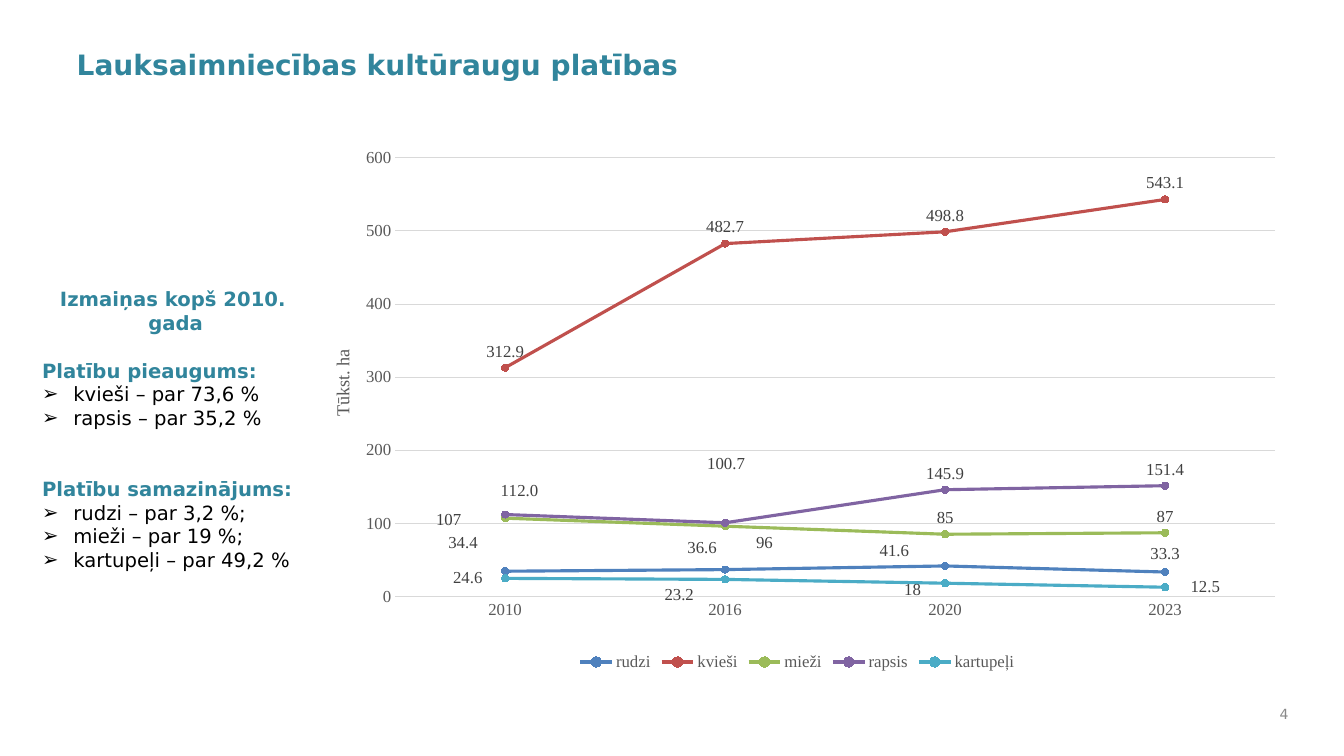
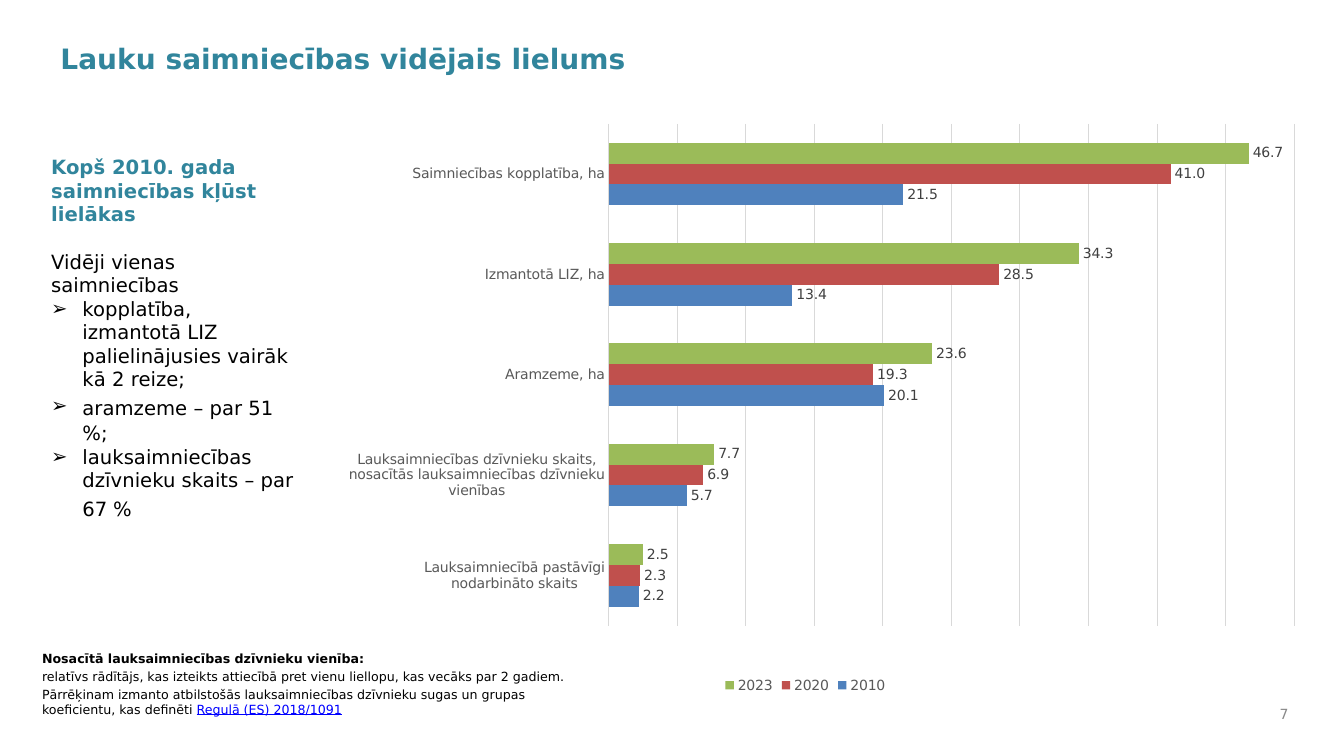
"""Build two slides on Latvian crop areas and average farm size."""
from dataclasses import dataclass, field

from lxml import etree
from pptx import Presentation
from pptx.chart.axis import ValueAxis
from pptx.chart.chart import Chart
from pptx.chart.data import CategoryChartData
from pptx.chart.series import BarSeries, LineSeries
from pptx.dml.color import RGBColor
from pptx.enum.chart import XL_CHART_TYPE, XL_LABEL_POSITION, XL_LEGEND_POSITION, XL_MARKER_STYLE, XL_TICK_MARK
from pptx.enum.shapes import MSO_SHAPE
from pptx.enum.text import MSO_ANCHOR, MSO_AUTO_SIZE, PP_ALIGN
from pptx.oxml.ns import qn
from pptx.presentation import Presentation as Deck
from pptx.slide import Slide
from pptx.text.text import Font, TextFrame
from pptx.util import Cm, Pt

LINE_CHART = XL_CHART_TYPE.LINE_MARKERS
BAR_CHART = XL_CHART_TYPE.BAR_CLUSTERED
ABOVE, OUTSIDE = XL_LABEL_POSITION.ABOVE, XL_LABEL_POSITION.OUTSIDE_END
BOTTOM = XL_LEGEND_POSITION.BOTTOM
CIRCLE = XL_MARKER_STYLE.CIRCLE
NO_TICK = XL_TICK_MARK.NONE
RECTANGLE = MSO_SHAPE.RECTANGLE
TOP, MIDDLE = MSO_ANCHOR.TOP, MSO_ANCHOR.MIDDLE
LEFT, CENTER, RIGHT = PP_ALIGN.LEFT, PP_ALIGN.CENTER, PP_ALIGN.RIGHT
NO_AUTOFIT = MSO_AUTO_SIZE.NONE

TEAL = RGBColor(0x31, 0x85, 0x9C)
BLACK = RGBColor(0x00, 0x00, 0x00)
WHITE = RGBColor(0xFF, 0xFF, 0xFF)
LINK_BLUE = RGBColor(0x00, 0x00, 0xFF)
PAGE_GRAY = RGBColor(0x89, 0x89, 0x89)
AXIS_GRAY = RGBColor(0x59, 0x59, 0x59)
LABEL_GRAY = RGBColor(0x40, 0x40, 0x40)
GRID_GRAY = RGBColor(0xD9, 0xD9, 0xD9)
BLUE = RGBColor(0x4F, 0x81, 0xBD)
RED = RGBColor(0xC0, 0x50, 0x4D)
GREEN = RGBColor(0x9B, 0xBB, 0x59)
PURPLE = RGBColor(0x80, 0x64, 0xA2)
AQUA = RGBColor(0x4B, 0xAC, 0xC6)

SANS, SERIF, SPACER_FONT = "DejaVu Sans", "Times New Roman", "Cabin"
BULLET_INDENT = Cm(0.79)


@dataclass(frozen=True)
class Area:
    """A rectangle on the page, in centimetres."""
    left: float
    top: float
    width: float
    height: float

    def lengths(self) -> tuple[Cm, Cm, Cm, Cm]:
        """Return the four sides as lengths."""
        return Cm(self.left), Cm(self.top), Cm(self.width), Cm(self.height)


@dataclass(frozen=True)
class Style:
    """The look of a piece of text."""
    size: float
    color: RGBColor = BLACK
    bold: bool = False
    name: str = SANS
    underline: bool = False


TITLE = Style(20, TEAL, True)
HEADING = Style(14, TEAL, True)
BODY = Style(14)
SPACER = Style(18, name=SPACER_FONT)
NOTE = Style(9)
NOTE_HEADING = Style(9, bold=True)
NOTE_LINK = Style(9, LINK_BLUE, underline=True)
PAGE_NUMBER = Style(10, PAGE_GRAY)


@dataclass(frozen=True)
class Span:
    """Text that differs from the style of its paragraph."""
    text: str
    style: Style


@dataclass(frozen=True)
class Para:
    """One paragraph of plain and styled text."""
    spans: tuple[str | Span, ...]
    style: Style = BODY
    align: PP_ALIGN = LEFT
    before: float = 0
    bullet: bool = False


@dataclass(frozen=True)
class Series:
    """One chart series; label shifts are percentages of the chart size."""
    name: str
    values: tuple[float, ...]
    color: RGBColor
    number_format: str = "General"
    shifts: dict[int, tuple[float, float]] = field(default_factory=dict)


@dataclass(frozen=True)
class ChartPlan:
    """A chart, its place and its plot area in percent."""
    kind: XL_CHART_TYPE
    area: Area
    plot: tuple[float, float, float, float]
    categories: tuple[str, ...]
    series: tuple[Series, ...]
    font_name: str
    font_size: float
    maximum: float
    step: float


NBSP = Span(" ", SPACER)

CROP_TEXT = (
    Para(("Izmaiņas kopš 2010.", Span("  ", SPACER), "gada"), HEADING, CENTER),
    Para(("Platību pieaugums:",), HEADING, before=17),
    Para(("kvieši – par 73,6 %",), bullet=True),
    Para(("rapsis – par 35,2 %",), bullet=True),
    Para(("Platību samazinājums:",), HEADING, before=34),
    Para(("rudzi – par 3,2 %;",), bullet=True),
    Para(("mieži – par 19 %;",), bullet=True),
    Para(("kartupeļi – par 49,2 %",), bullet=True),
)
FARM_TEXT = (
    Para(("Kopš 2010. gada saimniecības kļūst lielākas",), HEADING),
    Para(("Vidēji vienas saimniecības",), before=17),
    Para(("kopplatība, izmantotā LIZ palielinājusies vairāk kā 2 reize;",), bullet=True),
    Para(("aramzeme – par 51", NBSP, "%;"), bullet=True),
    Para(("lauksaimniecības dzīvnieku skaits – par 67", NBSP, "%"), bullet=True),
)
UNIT_NOTE = (
    Para(("Nosacītā lauksaimniecības dzīvnieku vienība:",), NOTE_HEADING),
    Para(("relatīvs rādītājs, kas izteikts attiecībā pret vienu liellopu, kas vecāks par 2 gadiem.",),
         NOTE, before=1.8),
    Para(("Pārrēķinam izmanto atbilstošās lauksaimniecības dzīvnieku sugas un grupas koeficientu, "
          "kas definēti ", Span("Regulā (ES) 2018/1091", NOTE_LINK)), NOTE, before=1.8),
)
CROP_CHART = ChartPlan(
    LINE_CHART, Area(8.03, 3.45, 24.13, 13.56), (8, 3.9, 91.9, 81.5),
    ("2010", "2016", "2020", "2023"),
    (
        Series("rudzi", (34.4, 36.6, 41.6, 33.3), BLUE,
               shifts={0: (-4.4, -2.2), 1: (-2.4, -1), 2: (-5.3, 0.2), 3: (0, -0.4)}),
        Series("kvieši", (312.9, 482.7, 498.8, 543.1), RED),
        Series("mieži", (107, 96, 85, 87), GREEN, shifts={0: (-5.9, 3.3), 1: (4.1, 6.1)}),
        Series("rapsis", (112, 100.7, 145.9, 151.4), PURPLE, "0.0",
               {0: (1.5, -1.3), 1: (0.1, -8)}),
        Series("kartupeļi", (24.6, 23.2, 18, 12.5), AQUA,
               shifts={0: (-3.9, 2.9), 1: (-4.8, 5.9), 2: (-3.4, 4.2), 3: (4.2, 2.9)}),
    ), SERIF, 12, 600, 100)
FARM_CHART = ChartPlan(
    BAR_CHART, Area(7.85, 3.02, 24.89, 14.55), (30.1, 0.7, 69.4, 86.9),
    ("Lauksaimniecībā pastāvīgi\nnodarbināto skaits",
     "Lauksaimniecības dzīvnieku skaits,\nnosacītās lauksaimniecības dzīvnieku vienības",
     "Aramzeme, ha", "Izmantotā LIZ, ha", "Saimniecības kopplatība, ha"),
    (
        Series("2010", (2.2, 5.7, 20.1, 13.4, 21.5), BLUE, "0.0"),
        Series("2020", (2.3, 6.9, 19.3, 28.5, 41), RED, "0.0"),
        Series("2023", (2.5, 7.7, 23.6, 34.3, 46.7), GREEN, "0.0"),
    ), SANS, 10, 50, 5)


def apply_style(font: Font, style: Style) -> None:
    """Give a font the look of a style."""
    font.name, font.size, font.bold = style.name, Pt(style.size), style.bold
    font.color.rgb = style.color
    if style.underline:
        font.underline = True


def write_text(frame: TextFrame, paras: tuple[Para, ...], anchor: MSO_ANCHOR = TOP) -> None:
    """Fill a text frame with paragraphs."""
    frame.word_wrap = True
    frame.auto_size = NO_AUTOFIT
    frame.vertical_anchor = anchor
    for index, para in enumerate(paras):
        paragraph = frame.add_paragraph() if index else frame.paragraphs[0]
        paragraph.alignment = para.align
        paragraph.space_before = Pt(para.before)
        if para.bullet:
            properties = paragraph._p.get_or_add_pPr()
            properties.set("marL", str(BULLET_INDENT))
            properties.set("indent", str(-BULLET_INDENT))
            etree.SubElement(properties, qn("a:buFont")).set("typeface", SANS)
            etree.SubElement(properties, qn("a:buChar")).set("char", "➢")
        apply_style(paragraph.font, para.style)
        for span in para.spans:
            run = paragraph.add_run()
            if isinstance(span, Span):
                run.text = span.text
                apply_style(run.font, span.style)
            else:
                run.text = span


def add_page(deck: Deck, title: str, area: Area, number: int) -> Slide:
    """Add a slide with its title and page number."""
    page = deck.slides.add_slide(deck.slide_layouts[5])
    heading = page.shapes.title
    heading.left, heading.top, heading.width, heading.height = area.lengths()
    write_text(heading.text_frame, (Para((title,), TITLE),))
    add_note(page, Area(31.6, 17.58, 1.12, 0.84), (Para((str(number),), PAGE_NUMBER, RIGHT),), MIDDLE)
    return page


def add_note(page: Slide, area: Area, paras: tuple[Para, ...], anchor: MSO_ANCHOR = TOP) -> None:
    """Add a plain text box."""
    write_text(page.shapes.add_textbox(*area.lengths()).text_frame, paras, anchor)


def add_panel(page: Slide, area: Area, paras: tuple[Para, ...], bottom_inset: float = 0.13) -> None:
    """Add a white panel with vertically centred text."""
    panel = page.shapes.add_shape(RECTANGLE, *area.lengths())
    panel.shadow.inherit = False
    panel.fill.solid()
    panel.fill.fore_color.rgb = WHITE
    panel.line.fill.background()
    panel.text_frame.margin_bottom = Cm(bottom_inset)
    write_text(panel.text_frame, paras, MIDDLE)


def set_layout(parent: etree._Element, index: int, **settings: str | float) -> None:
    """Give a chart element a manual layout; numbers are percentages."""
    for old in parent.findall(qn("c:layout")):
        parent.remove(old)
    layout = etree.Element(qn("c:layout"))
    manual = etree.SubElement(layout, qn("c:manualLayout"))
    for name, value in settings.items():
        text = value if isinstance(value, str) else f"{value / 100:.3f}"
        etree.SubElement(manual, qn(f"c:{name}")).set("val", text)
    parent.insert(index, layout)


def format_labels(series: BarSeries | LineSeries, plan: Series, style: Style,
                  position: XL_LABEL_POSITION) -> None:
    """Show the values of a series and move the shifted labels."""
    labels = series.data_labels
    labels.show_value = True
    labels.position = position
    apply_style(labels.font, style)
    for index in plan.shifts:
        label = series.points[index].data_label
        label.position = position
        apply_style(label.font, style)
    for node, (x, y) in zip(series._element.xpath("c:dLbls/c:dLbl"), plan.shifts.values()):
        set_layout(node, 1, x=x, y=y)
    for node in series._element.xpath("c:dLbls/c:showLeaderLines"):
        node.set("val", "0")


def format_value_axis(axis: ValueAxis, plan: ChartPlan) -> None:
    """Set the scale and grid of the value axis."""
    axis.minimum_scale, axis.maximum_scale, axis.major_unit = 0, plan.maximum, plan.step
    axis.has_major_gridlines = True
    grid = axis.major_gridlines.format.line
    grid.color.rgb, grid.width = GRID_GRAY, Pt(0.75)
    axis.major_tick_mark = NO_TICK
    axis.format.line.fill.background()


def add_plan(page: Slide, plan: ChartPlan) -> Chart:
    """Draw a chart from its plan."""
    data = CategoryChartData()
    data.categories = plan.categories
    for item in plan.series:
        data.add_series(item.name, item.values, item.number_format)
    chart = page.shapes.add_chart(plan.kind, *plan.area.lengths(), data).chart
    gray = Style(plan.font_size, AXIS_GRAY, name=plan.font_name)
    apply_style(chart.font, Style(10, name=plan.font_name))
    chart.has_title = False
    chart.has_legend = True
    chart.legend.position = BOTTOM
    chart.legend.include_in_layout = False
    apply_style(chart.legend.font, gray)
    x, y, w, h = plan.plot
    set_layout(chart._chartSpace.chart.plotArea, 0, layoutTarget="inner",
               xMode="edge", yMode="edge", x=x, y=y, w=w, h=h)
    axis = chart.category_axis
    axis.major_tick_mark = NO_TICK
    axis.format.line.color.rgb, axis.format.line.width = GRID_GRAY, Pt(0.75)
    format_value_axis(chart.value_axis, plan)
    for each in (axis, chart.value_axis):
        apply_style(each.tick_labels.font, gray)
    chart.plots[0].vary_by_categories = False
    label_style = Style(plan.font_size, LABEL_GRAY, name=plan.font_name)
    for series, item in zip(chart.plots[0].series, plan.series):
        fill = series.format.fill
        if plan.kind == LINE_CHART:
            series.smooth = False
            series.format.line.color.rgb, series.format.line.width = item.color, Pt(2.25)
            series.marker.style, series.marker.size = CIRCLE, 5
            series.marker.format.line.color.rgb = item.color
            fill = series.marker.format.fill
        fill.solid()
        fill.fore_color.rgb = item.color
        format_labels(series, item, label_style, ABOVE if plan.kind == LINE_CHART else OUTSIDE)
    return chart


def add_crop_page(deck: Deck) -> None:
    """Add the slide on crop areas."""
    page = add_page(deck, "Lauksaimniecības kultūraugu platības", Area(1.68, 1.07, 30.5, 1.9), 4)
    add_panel(page, Area(0.81, 5.59, 7.24, 10.97), CROP_TEXT, 0.8)
    axis = add_plan(page, CROP_CHART).value_axis
    for old in axis._element.findall(qn("c:crossBetween")):
        axis._element.remove(old)
    between = etree.Element(qn("c:crossBetween"))
    between.set("val", "between")
    axis._element.find(qn("c:crosses")).addnext(between)
    paragraph = axis.axis_title.text_frame.paragraphs[0]
    paragraph.add_run().text = "Tūkst. ha"
    apply_style(paragraph.font, Style(13, AXIS_GRAY, name=SERIF))
    set_layout(axis.axis_title._element, 1, xMode="edge", yMode="edge", x=1, y=39)


def add_farm_page(deck: Deck) -> None:
    """Add the slide on average farm size."""
    page = add_page(deck, "Lauku saimniecības vidējais lielums", Area(1.27, 0.91, 29.44, 1.75), 7)
    chart = add_plan(page, FARM_CHART)
    chart.plots[0].gap_width = 182
    chart.value_axis.visible = False
    add_panel(page, Area(1.04, 3.45, 6.63, 10.16), FARM_TEXT)
    add_note(page, Area(0.81, 16.28, 14, 2.08), UNIT_NOTE)


def main() -> None:
    """Build and save the deck."""
    deck = Presentation()
    deck.slide_width, deck.slide_height = Cm(33.87), Cm(19.05)
    add_crop_page(deck)
    add_farm_page(deck)
    deck.save("out.pptx")


if __name__ == "__main__":
    main()
